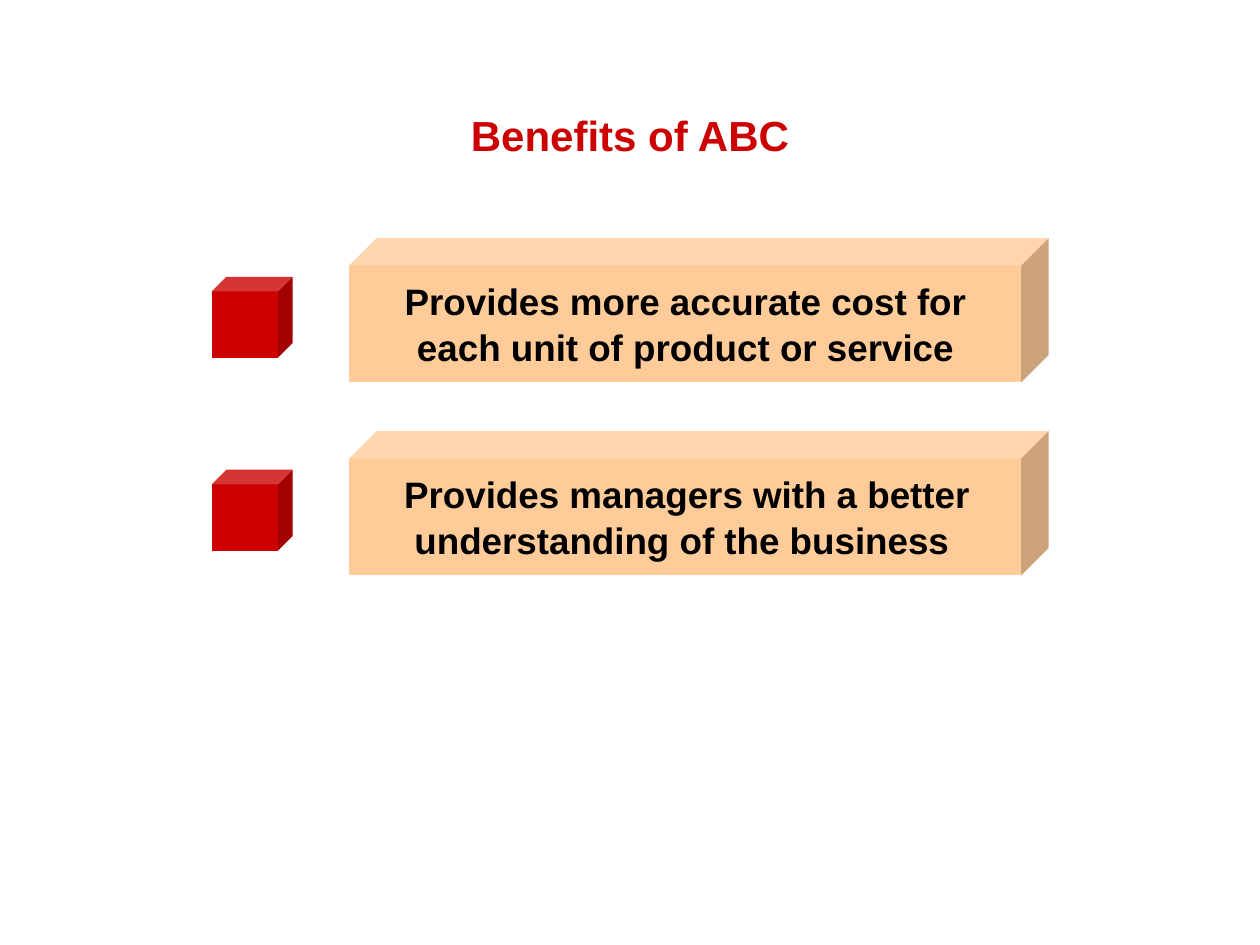
from pptx import Presentation
from pptx.dml.color import RGBColor as Rgb
from pptx.enum.shapes import MSO_SHAPE as Shape
from pptx.enum.text import MSO_ANCHOR as Anchor, MSO_AUTO_SIZE as Fit, PP_ALIGN as Align
from pptx.util import Cm, Pt

TITLE = "Benefits of ABC"
# Wording, left edge and width of each text, in cm
ROWS = [
    ("Provides more accurate cost for each unit of product or service", 7.37, 12.9),
    ("Provides managers with a better understanding of the business ", 7.21, 13.28),
]
THEME = {
    "font": "Arial",
    "red": Rgb(0xCC, 0x00, 0x00),
    "peach": Rgb(0xFF, 0xCC, 0x99),
    "ink": Rgb(0x00, 0x00, 0x00),
    "title": Pt(24),
    "body": Pt(21),
}
TOP, STEP = 4.8, 3.89


def write(box, text, size, color):
    frame = box.text_frame
    frame.text = text
    frame.word_wrap = True
    frame.auto_size = Fit.SHAPE_TO_FIT_TEXT
    frame.vertical_anchor = Anchor.TOP
    para = frame.paragraphs[0]
    para.alignment = Align.CENTER
    para.line_spacing = 1.05
    font = para.runs[0].font
    font.name, font.size, font.bold = THEME["font"], size, True
    font.color.rgb = color


def add_cube(slide, left, top, width, height, depth, color):
    cube = slide.shapes.add_shape(Shape.CUBE, Cm(left), Cm(top), Cm(width), Cm(height))
    cube.adjustments[0] = depth
    cube.shadow.inherit = False
    cube.fill.solid()
    cube.fill.fore_color.rgb = color
    cube.line.fill.background()


def main():
    deck = Presentation()
    deck.slide_width, deck.slide_height = Cm(25.4), Cm(19.05)
    slide = deck.slides.add_slide(deck.slide_layouts[5])

    title = slide.shapes.title
    title.left, title.top = Cm(0.95), Cm(2.03)
    title.width, title.height = Cm(23.5), Cm(1.27)
    write(title, TITLE, THEME["title"], THEME["red"])

    for row, (text, left, width) in enumerate(ROWS):
        top = TOP + row * STEP
        add_cube(slide, 4.27, top + 0.78, 1.63, 1.63, 0.18, THEME["red"])
        add_cube(slide, 7.04, top, 14.1, 2.91, 0.19, THEME["peach"])
        box = slide.shapes.add_textbox(Cm(left), Cm(top + 0.65), Cm(width), Cm(2.06))
        write(box, text, THEME["body"], THEME["ink"])

    deck.save("out.pptx")


if __name__ == "__main__":
    main()
